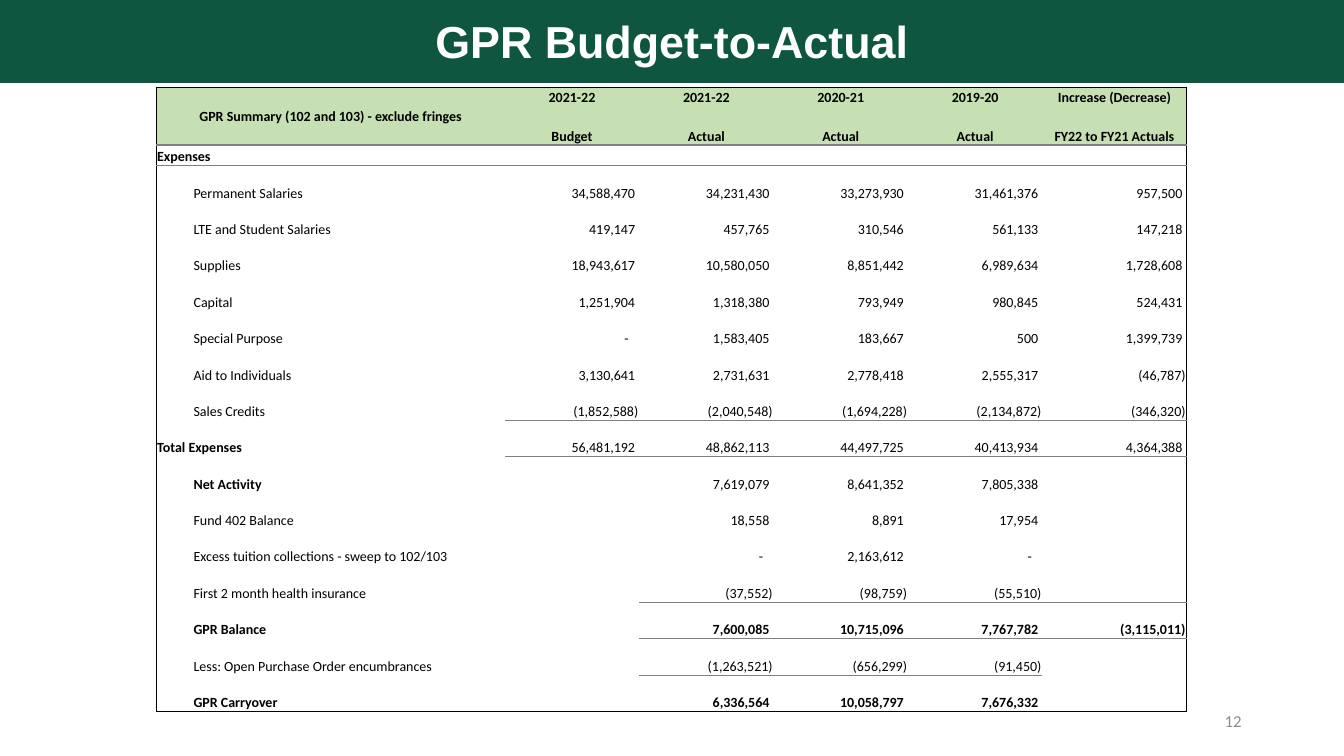
import pptx
import pptx.dml.color
import pptx.enum.text
import pptx.oxml.ns
import pptx.util
from lxml import etree

Pt = pptx.util.Pt
RGBColor = pptx.dml.color.RGBColor
Align = pptx.enum.text.PP_ALIGN
Anchor = pptx.enum.text.MSO_ANCHOR
qn = pptx.oxml.ns.qn

GREEN = RGBColor(0x0F, 0x56, 0x40)
PALE_GREEN = RGBColor(0xC6, 0xE0, 0xB4)
WHITE = RGBColor(0xFF, 0xFF, 0xFF)
BLACK = RGBColor(0, 0, 0)
RULE_GREY = RGBColor(0x80, 0x80, 0x80)
NUMBER_GREY = RGBColor(0x8C, 0x8C, 0x8C)
NO_STYLE = "{2D5ABB26-0587-4C30-8999-92F81FD0307C}"

TITLE = "GPR Budget-to-Actual"
PAGE_NUMBER = "12"
TABLE_HEADING = "GPR Summary (102 and 103) - exclude fringes"
COLUMN_HEADINGS = [
    ("2021-22", "Budget"),
    ("2021-22", "Actual"),
    ("2020-21", "Actual"),
    ("2019-20", "Actual"),
    ("Increase (Decrease)", "FY22 to FY21 Actuals"),
]
LINES = [
    ("Expenses", "", "", "", "", ""),
    ("Permanent Salaries", "34,588,470", "34,231,430", "33,273,930", "31,461,376", "957,500"),
    ("LTE and Student Salaries", "419,147", "457,765", "310,546", "561,133", "147,218"),
    ("Supplies", "18,943,617", "10,580,050", "8,851,442", "6,989,634", "1,728,608"),
    ("Capital", "1,251,904", "1,318,380", "793,949", "980,845", "524,431"),
    ("Special Purpose", "-", "1,583,405", "183,667", "500", "1,399,739"),
    ("Aid to Individuals", "3,130,641", "2,731,631", "2,778,418", "2,555,317", "(46,787)"),
    ("Sales Credits", "(1,852,588)", "(2,040,548)", "(1,694,228)", "(2,134,872)", "(346,320)"),
    ("Total Expenses", "56,481,192", "48,862,113", "44,497,725", "40,413,934", "4,364,388"),
    ("Net Activity", "", "7,619,079", "8,641,352", "7,805,338", ""),
    ("Fund 402 Balance", "", "18,558", "8,891", "17,954", ""),
    ("Excess tuition collections - sweep to 102/103", "", "-", "2,163,612", "-", ""),
    ("First 2 month health insurance", "", "(37,552)", "(98,759)", "(55,510)", ""),
    ("GPR Balance", "", "7,600,085", "10,715,096", "7,767,782", "(3,115,011)"),
    ("Less: Open Purchase Order encumbrances", "", "(1,263,521)", "(656,299)", "(91,450)", ""),
    ("GPR Carryover", "", "6,336,564", "10,058,797", "7,676,332", ""),
]
SECTIONS = {"Expenses", "Total Expenses"}
BOLD_LABELS = SECTIONS | {"Net Activity", "GPR Balance", "GPR Carryover"}
BOLD_AMOUNTS = {"GPR Balance", "GPR Carryover"}

HEADER_ROWS = 2
COLUMN_WIDTHS = [26, 223] + [96] * 4 + [103]
ROW_HEIGHTS = [13, 28, 14.6] + [26] * (len(LINES) - 1)
LAST_ROW, LAST_COLUMN = len(ROW_HEIGHTS) - 1, len(COLUMN_WIDTHS) - 1
# Row above the rule: first column, last column, colour, width
RULES = {
    -1: (0, 6, BLACK, 1),
    1: (0, 6, RULE_GREY, 1),
    9: (2, 6, RULE_GREY, 1),
    14: (3, 6, RULE_GREY, 1),
    16: (3, 5, RULE_GREY, 0.5),
    LAST_ROW: (0, 6, BLACK, 1),
}


def set_font(paragraph, name, size, color, bold=False):
    paragraph.font.name = name
    paragraph.font.size = Pt(size)
    paragraph.font.color.rgb = color
    paragraph.font.bold = bold


def amount_margin(amount):
    """Right margin that lines up digits, with closing brackets hanging outside."""
    if amount == "-":
        return 7.5
    return 0.7 if amount.endswith(")") else 3


def fill_cell(cell, text, align=Align.LEFT, bold=False, right=0.7, anchor=Anchor.BOTTOM):
    cell.text = text
    cell.vertical_anchor = anchor
    cell.margin_left, cell.margin_right = Pt(0.7), Pt(right)
    paragraph = cell.text_frame.paragraphs[0]
    paragraph.alignment = align
    set_font(paragraph, "Calibri", 10, BLACK, bold)
    if not text:
        etree.SubElement(paragraph._p, qn("a:endParaRPr"), sz="1000")


def rule_at(row, column):
    """Colour and width of the rule under a row, or None."""
    first, last, color, width = RULES.get(row, (1, 0, None, 0))
    return (color, width) if first <= column <= last else None


def draw_borders(cell, row, column):
    edge = (BLACK, 1)
    borders = [
        ("a:lnL", edge if column == 0 else None),
        ("a:lnR", edge if column == LAST_COLUMN else None),
        ("a:lnT", rule_at(row - 1, column)),
        ("a:lnB", rule_at(row + cell.span_height - 1 if cell.is_merge_origin else row, column)),
    ]
    properties = cell._tc.get_or_add_tcPr()
    present = [(tag, border) for tag, border in borders if border]
    for position, (tag, (color, width)) in enumerate(present):
        line = etree.Element(qn(tag), w=str(int(Pt(width))))
        solid = etree.SubElement(line, qn("a:solidFill"))
        etree.SubElement(solid, qn("a:srgbClr"), val=str(color))
        properties.insert(position, line)


def add_budget_table(page):
    frame = page.shapes.add_table(
        len(ROW_HEIGHTS), len(COLUMN_WIDTHS),
        Pt(111.6), Pt(62.6), Pt(sum(COLUMN_WIDTHS)), Pt(sum(ROW_HEIGHTS)))
    table = frame.table
    table.first_row = table.horz_banding = False
    table._tbl.tblPr.find(qn("a:tableStyleId")).text = NO_STYLE
    for column, width in zip(table.columns, COLUMN_WIDTHS):
        column.width = Pt(width)
    for row, height in zip(table.rows, ROW_HEIGHTS):
        row.height = Pt(height)

    table.cell(0, 0).merge(table.cell(1, 1))
    for row in range(HEADER_ROWS):
        for column in range(2):
            fill_cell(table.cell(row, column), "" if row or column else TABLE_HEADING,
                      Align.CENTER, True, anchor=Anchor.MIDDLE)
        for column, heading in enumerate(COLUMN_HEADINGS, 2):
            fill_cell(table.cell(row, column), heading[row], Align.CENTER, True)

    for row, (label, *amounts) in enumerate(LINES, HEADER_ROWS):
        is_section = label in SECTIONS
        if is_section:
            table.cell(row, 0).merge(table.cell(row, 1))
        fill_cell(table.cell(row, 0), label if is_section else "", bold=is_section)
        fill_cell(table.cell(row, 1), "" if is_section else label, bold=label in BOLD_LABELS)
        for column, amount in enumerate(amounts, 2):
            fill_cell(table.cell(row, column), amount, Align.RIGHT,
                      label in BOLD_AMOUNTS, amount_margin(amount))

    for row in range(LAST_ROW + 1):
        for column in range(LAST_COLUMN + 1):
            cell = table.cell(row, column)
            cell.margin_top, cell.margin_bottom = Pt(0.7), 0
            if row < HEADER_ROWS:
                cell.fill.solid()
                cell.fill.fore_color.rgb = PALE_GREEN
            else:
                cell.fill.background()
            draw_borders(cell, row, column)


def place_text(box, text, align):
    box.text_frame.text = text
    box.text_frame.word_wrap = True
    box.text_frame.vertical_anchor = Anchor.MIDDLE
    paragraph = box.text_frame.paragraphs[0]
    paragraph.alignment = align
    return paragraph


def main():
    deck = pptx.Presentation()
    deck.slide_width, deck.slide_height = Pt(960), Pt(540)
    page = deck.slides.add_slide(deck.slide_layouts[5])

    title = page.shapes.title
    title.left, title.top, title.width, title.height = Pt(0), Pt(-0.7), Pt(960), Pt(60)
    title.fill.solid()
    title.fill.fore_color.rgb = GREEN
    set_font(place_text(title, TITLE, Align.CENTER), "Arial", 32, WHITE, True)

    add_budget_table(page)

    number_box = page.shapes.add_textbox(Pt(678), Pt(500.5), Pt(216), Pt(28.8))
    set_font(place_text(number_box, PAGE_NUMBER, Align.RIGHT), "Calibri", 12, NUMBER_GREY)

    deck.save("out.pptx")


if __name__ == "__main__":
    main()
